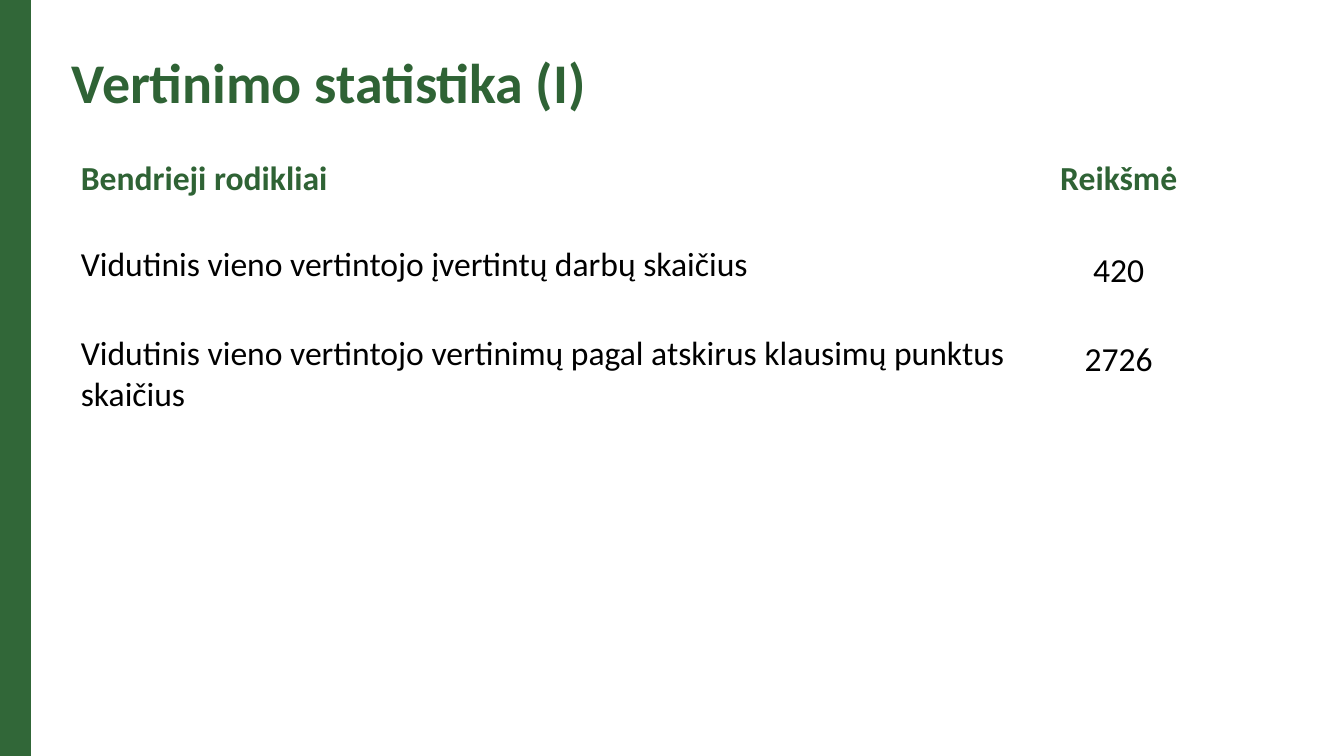
from dataclasses import dataclass

from pptx import Presentation
from pptx import util as u
from pptx.dml import color
from pptx.enum import text
from pptx.oxml import ns

PX = 9525
COLORS = {"strip": "316738", "heading": "2F6335", "body": "000000"}
PLAIN_STYLE = "{2D5ABB26-0587-4C30-8999-92F81FD0307C}"
CELL_INSET = 10


@dataclass
class Grid:
    left: int
    top: int
    columns: list[int]
    rows: list[int]
    texts: list[list[str]]
    fill: str | None = None


def px(length: int) -> u.Emu:
    return u.Emu(length * PX)


def rgb(name: str) -> color.RGBColor:
    return color.RGBColor.from_string(COLORS[name])


def style_paragraph(para, size: int, tint: str, bold: bool) -> None:
    for span in para.runs:
        span.font.name = "Calibri"
        span.font.size = u.Pt(size)
        span.font.bold = bold
        span.font.color.rgb = rgb(tint)


def fill_cell(cell, words: str, row: int, column: int, fill: str | None) -> None:
    if fill:
        cell.fill.solid()
        cell.fill.fore_color.rgb = rgb(fill)
    else:
        cell.fill.background()
    cell.margin_left = cell.margin_right = px(CELL_INSET)
    cell.margin_top = cell.margin_bottom = px(CELL_INSET)
    cell.text_frame.text = words
    para = cell.text_frame.paragraphs[0]
    if column:
        para.alignment = text.PP_ALIGN.CENTER
        if row:
            para.line_spacing = 1.15
    header = row == 0
    style_paragraph(para, 24, "heading" if header else "body", header)


def draw_grid(page, grid: Grid) -> None:
    frame = page.shapes.add_table(
        len(grid.rows), len(grid.columns), px(grid.left), px(grid.top),
        px(sum(grid.columns)), px(sum(grid.rows)))
    frame.element.find(".//" + ns.qn("a:tableStyleId")).text = PLAIN_STYLE
    table = frame.table
    table.first_row = table.horz_banding = False
    for column, width in zip(table.columns, grid.columns):
        column.width = px(width)
    for row, height in zip(table.rows, grid.rows):
        row.height = px(height)
    for r, line in enumerate(grid.texts):
        for c, words in enumerate(line):
            fill_cell(table.cell(r, c), words, r, c, grid.fill)


def draw_title(page, words: str) -> None:
    box = page.shapes.add_textbox(px(59), px(12), px(1104), px(139))
    frame = box.text_frame
    frame.word_wrap = True
    frame.vertical_anchor = text.MSO_ANCHOR.MIDDLE
    frame.text = words
    para = frame.paragraphs[0]
    para.line_spacing = 0.9
    style_paragraph(para, 40, "heading", True)


def main() -> None:
    deck = Presentation()
    deck.slide_width, deck.slide_height = px(1280), px(720)
    page = deck.slides.add_slide(deck.slide_layouts[6])
    draw_grid(page, Grid(0, 0, [30], [720], [[""]], "strip"))
    draw_title(page, "Vertinimo statistika (I)")
    draw_grid(page, Grid(67, 141, [911, 175], [82, 85, 107], [
        ["Bendrieji rodikliai", "Reikšmė"],
        ["Vidutinis vieno vertintojo įvertintų darbų skaičius", "420"],
        ["Vidutinis vieno vertintojo vertinimų pagal atskirus klausimų punktus skaičius", "2726"],
    ]))
    deck.save("out.pptx")


if __name__ == "__main__":
    main()
